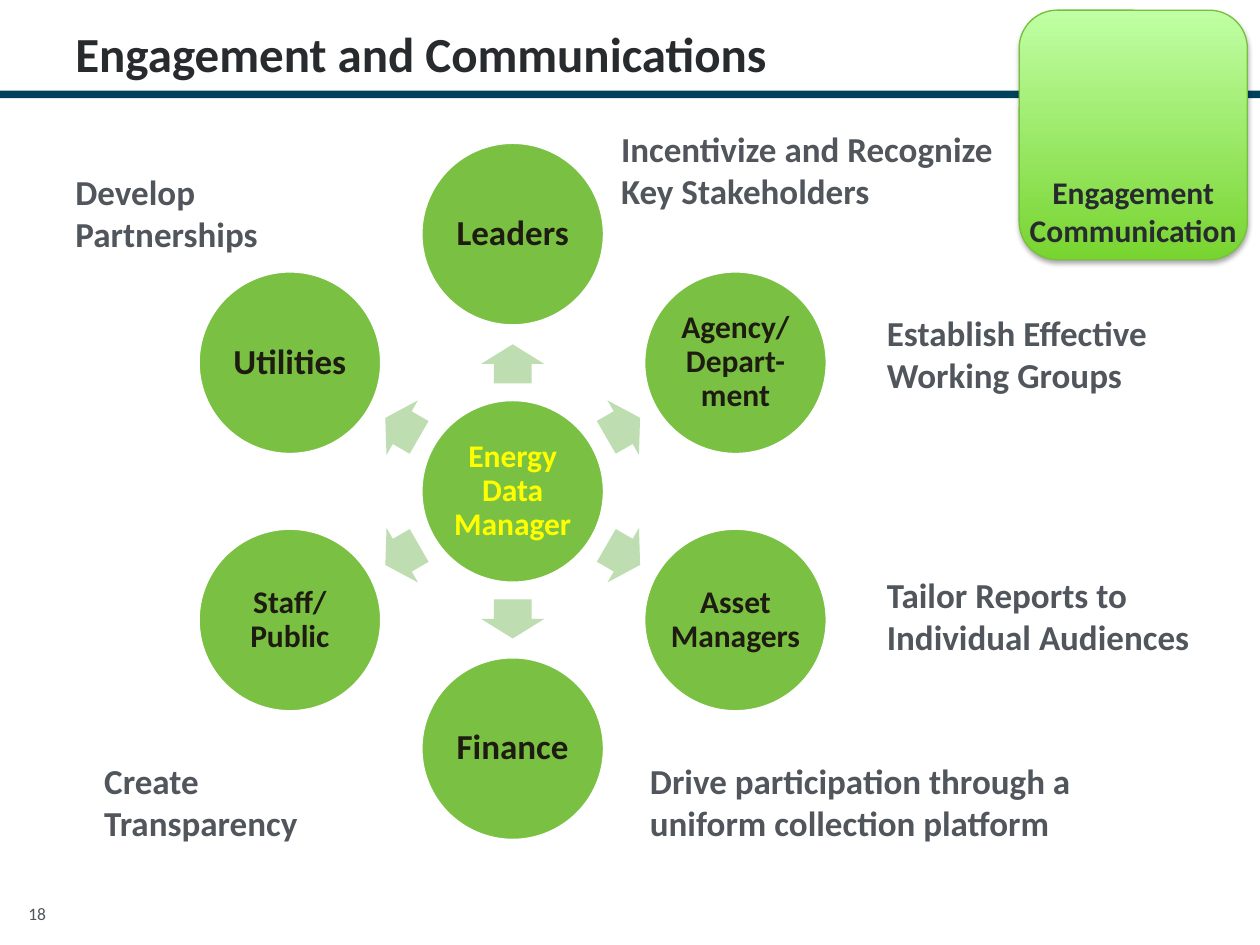
import math
import pptx
import pptx.util
import pptx.dml.color
import pptx.enum.shapes
import pptx.enum.text
from lxml import etree

Pt = pptx.util.Pt
Kind = pptx.enum.shapes.MSO_SHAPE
Align = pptx.enum.text.PP_ALIGN
Anchor = pptx.enum.text.MSO_ANCHOR

TITLE = "Engagement and Communications"
CARD = ["Engagement", "Communication"]
HUB = ("Energy Data Manager", 18)
ROLES = [
    ("Leaders", 20, 2),
    ("Agency/Depart-ment", 18, 2),
    ("Asset Managers", 18, 0),
    ("Finance", 20, 2),
    ("Staff/ Public", 18, 2),
    ("Utilities", 20, 2),
]
NOTES = [
    ("Tailor Reports to Individual Audiences", 499.7, 324, 207.4),
    ("Create Transparency", 52.5, 430.5, 138),
    ("Drive participation through a uniform collection platform", 364.3, 430.5, 284),
    ("Establish Effective Working Groups", 499.7, 174.2, 201),
    ("Incentivize and Recognize Key Stakeholders", 347.8, 69.1, 252),
    ("Develop Partnerships", 36, 93.6, 138),
]

MID_X, MID_Y = 293, 280.8
DISC, RING = 105, 147
ARROW_W, ARROW_H, ARROW_R = 22.3, 36, 72.9
GREEN, PALE, NAVY = "7AC143", "BEDDB0", "00425D"
INK, GREY, DARK, GOLD = "282B2E", "50565C", "1E1C11", "FFFF00"

deck = pptx.Presentation()
deck.slide_width, deck.slide_height = Pt(720), Pt(540)
slide = deck.slides.add_slide(deck.slide_layouts[6])


def color(code):
    return pptx.dml.color.RGBColor.from_string(code)


def shape(kind, x, y, w, h, fill, line=None, width=0):
    item = slide.shapes.add_shape(kind, Pt(x), Pt(y), Pt(w), Pt(h))
    item.shadow.inherit = False
    item.fill.solid()
    item.fill.fore_color.rgb = color(fill)
    if line:
        item.line.color.rgb = color(line)
        item.line.width = Pt(width)
    else:
        item.line.fill.background()
    return item


def write(item, lines, size, ink, bold=True, align=Align.LEFT,
          anchor=Anchor.TOP, lead=None, pad=None, wrap=True):
    frame = item.text_frame
    frame.word_wrap = wrap
    frame.vertical_anchor = anchor
    if pad is not None:
        frame.margin_left = frame.margin_right = Pt(pad[0])
        frame.margin_top = frame.margin_bottom = Pt(pad[1])
    frame.text = "\n".join(lines)
    for para in frame.paragraphs:
        para.alignment = align
        if lead:
            para.line_spacing = lead
        font = para.font
        font.name, font.size, font.bold = "Calibri", Pt(size), bold
        font.color.rgb = color(ink)


def box(x, y, w, h, text, size, ink, **style):
    item = slide.shapes.add_textbox(Pt(x), Pt(y), Pt(w), Pt(h))
    write(item, [text], size, ink, **style)


def disc(x, y, text, size, ink, side=2):
    item = shape(Kind.OVAL, x - DISC / 2, y - DISC / 2, DISC, DISC,
                 GREEN, "FFFFFF", 2)
    write(item, [text], size, ink, align=Align.CENTER,
          anchor=Anchor.MIDDLE, lead=0.9, pad=(side, 2))


def spot(angle, dist):
    turn = math.radians(angle)
    return MID_X + dist * math.cos(turn), MID_Y + dist * math.sin(turn)


def cast(item):
    space = "http://schemas.openxmlformats.org/drawingml/2006/main"
    tag = "{%s}" % space
    effects = item.element.spPr.find(tag + "effectLst")
    shade = etree.SubElement(effects, tag + "outerShdw",
                             blurRad=str(Pt(3.1)), dist=str(Pt(1.8)),
                             dir="5400000", rotWithShape="0")
    black = etree.SubElement(shade, tag + "srgbClr", val="000000")
    etree.SubElement(black, tag + "alpha", val="35000")


shape(Kind.RECTANGLE, 0, 51.8, 720, 4.3, NAVY)
box(3.6, 514, 35.3, 18.7, "18", 10, GREY, bold=False,
    align=Align.CENTER, lead=0.9)

card = shape(Kind.ROUNDED_RECTANGLE, 582.4, 5.8, 130.4, 142.6,
             GREEN, "77C03E", 0.75)
card.fill.gradient()
card.fill.gradient_angle = 90
for stop, code in zip(card.fill.gradient_stops, ["78D430", "C0FFA4"]):
    stop.color.rgb = color(code)
    stop.position = 0 if code == "78D430" else 1
cast(card)
write(card, CARD, 18, INK, align=Align.CENTER, anchor=Anchor.BOTTOM,
      pad=(0, 0), wrap=False)

box(36, 0, 648, 66.2, TITLE, 28, INK, anchor=Anchor.MIDDLE, lead=Pt(28))

disc(MID_X, MID_Y, *HUB, GOLD)
for rank, (name, size, side) in enumerate(ROLES):
    angle = rank * 360 / len(ROLES) - 90
    x, y = spot(angle, ARROW_R)
    arrow = shape(Kind.RIGHT_ARROW, x - ARROW_W / 2, y - ARROW_H / 2,
                  ARROW_W, ARROW_H, PALE)
    arrow.adjustments[0], arrow.adjustments[1] = 0.6, 0.5
    arrow.rotation = angle % 360
    disc(*spot(angle, RING), name, size, DARK, side)

for text, x, y, w in NOTES:
    box(x, y, w, 55.7, text, 20, GREY)

deck.save("out.pptx")
